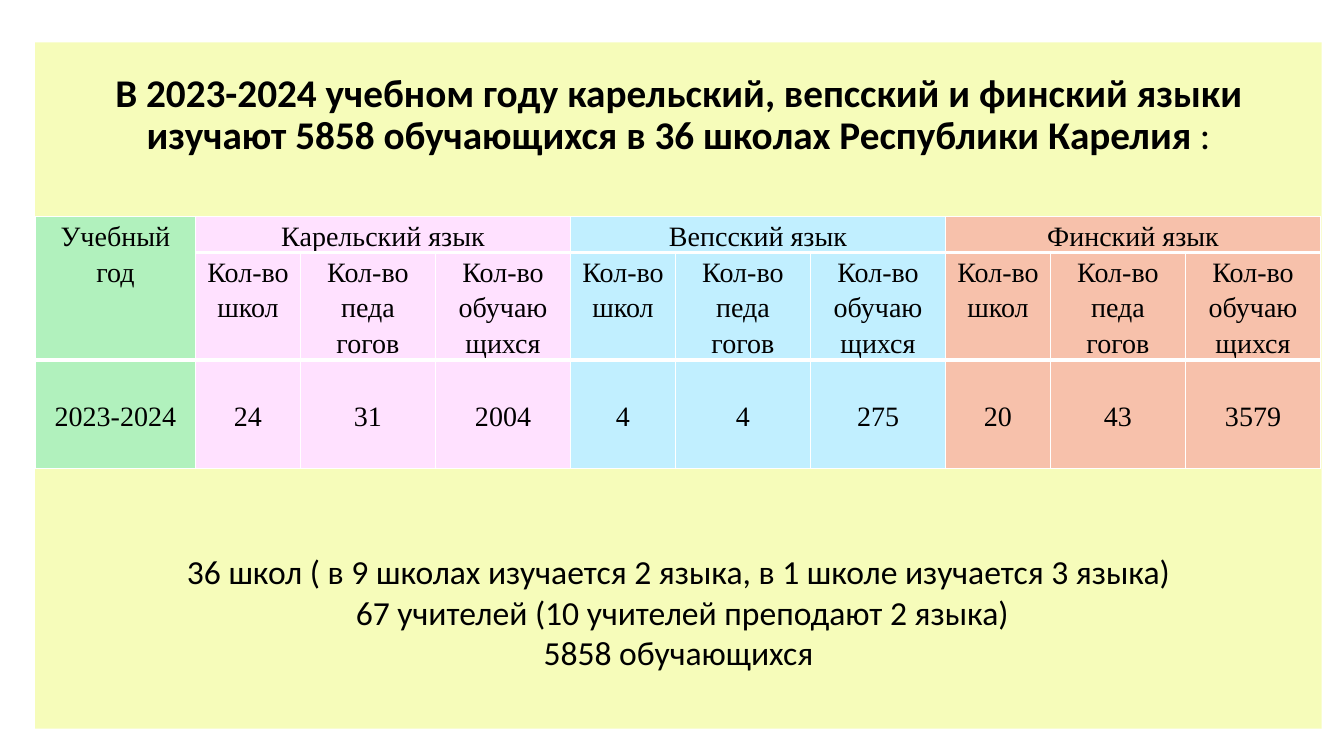
import pptx
import pptx.util
from lxml import etree
from pptx.dml.color import RGBColor
from pptx.enum.shapes import MSO_SHAPE
from pptx.enum.text import MSO_ANCHOR, PP_ALIGN
from pptx.oxml.ns import qn
from pptx.util import Inches, Pt

BLACK = RGBColor(0x00, 0x00, 0x00)
YELLOW = RGBColor(0xF6, 0xFC, 0xBA)
GREEN = RGBColor(0xB1, 0xF1, 0xBD)
PINK = RGBColor(0xFF, 0xE1, 0xFF)
BLUE = RGBColor(0xC1, 0xEF, 0xFF)
SALMON = RGBColor(0xF7, 0xC1, 0xAB)
WHITE = RGBColor(0xFF, 0xFF, 0xFF)

TITLE = ("В 2023-2024 учебном году карельский, вепсский и финский языки "
         "изучают 5858 обучающихся в 36 школах Республики Карелия ")
YEAR_HEADING, YEAR = "Учебный год", "2023-2024"
MEASURES = [["Кол-во школ"], ["Кол-во педа", "гогов"], ["Кол-во", "обучаю", "щихся"]]
LANGUAGES = [
    ("Карельский язык", PINK, (24, 31, 2004)),
    ("Вепсский язык", BLUE, (4, 4, 275)),
    ("Финский язык", SALMON, (20, 43, 3579)),
]
SUMMARY = [
    "36 школ ( в 9 школах изучается 2 языка, в 1 школе изучается 3 языка)",
    " 67 учителей (10 учителей преподают 2 языка)",
    "5858 обучающихся",
]

LEFT, WIDTH = 0.35, 12.76
YEAR_WIDTH, MEASURE_WIDTHS = 1.59, [1.04, 1.34, 1.34]
ROW_HEIGHTS = [0.35, 1.07, 1.07]
TITLE_FONT = {"name": "Calibri", "size": Pt(28), "bold": True}
TABLE_FONT = {"name": "Times New Roman", "size": Pt(20), "bold": False}
SUMMARY_FONT = {"name": "Calibri", "size": Pt(24)}


def add_span(para, text, font):
    span = para.add_run()
    span.text = text
    for key, value in font.items():
        setattr(span.font, key, value)
    span.font.color.rgb = BLACK


def write_lines(frame, lines, font, spacing=None):
    for index, line in enumerate(lines):
        para = frame.add_paragraph() if index else frame.paragraphs[0]
        para.alignment = PP_ALIGN.CENTER
        para.line_spacing = spacing
        add_span(para, line, font)


def add_borders(cell, points):
    """Draw white cell edges; points maps an edge tag to its width."""
    properties = cell._tc.get_or_add_tcPr()
    for tag, width in points.items():
        edge = etree.SubElement(properties, qn(f"a:{tag}"), w=str(Pt(width)))
        fill = etree.SubElement(edge, qn("a:solidFill"))
        etree.SubElement(fill, qn("a:srgbClr"), val=str(WHITE))


def add_panel(page):
    panel = page.shapes.add_shape(MSO_SHAPE.RECTANGLE, Inches(LEFT), Inches(0.42),
                                  Inches(WIDTH), Inches(6.81))
    panel.shadow.inherit = False
    panel.fill.solid()
    panel.fill.fore_color.rgb = YELLOW
    panel.line.fill.background()
    frame = panel.text_frame
    frame.vertical_anchor = MSO_ANCHOR.TOP
    frame.margin_top = Inches(0.31)
    write_lines(frame, [TITLE], TITLE_FONT, 0.9)
    add_span(frame.paragraphs[0], ":", {**TITLE_FONT, "bold": False})


def add_language_table(page):
    per_language = len(MEASURES)
    widths = [YEAR_WIDTH] + MEASURE_WIDTHS * len(LANGUAGES)
    colors = [GREEN] + [color for _, color, _ in LANGUAGES for _ in MEASURES]
    texts = {(0, 0): [YEAR_HEADING], (2, 0): [YEAR]}
    for group, (language, _, values) in enumerate(LANGUAGES):
        first = 1 + group * per_language
        texts[0, first] = [language]
        for offset, (measure, value) in enumerate(zip(MEASURES, values)):
            texts[1, first + offset] = measure
            texts[2, first + offset] = [str(value)]

    table = page.shapes.add_table(
        len(ROW_HEIGHTS), len(widths), Inches(LEFT), Inches(2.15),
        Inches(sum(widths)), Inches(sum(ROW_HEIGHTS))).table
    table.first_row = table.horz_banding = False
    for column, width in zip(table.columns, widths):
        column.width = Inches(width)
    last = len(ROW_HEIGHTS) - 1
    for row, height in enumerate(ROW_HEIGHTS):
        table.rows[row].height = Inches(height)
        for column, color in enumerate(colors):
            cell = table.cell(row, column)
            add_borders(cell, {"lnL": 1, "lnR": 1, "lnT": 3 if row else 1,
                               "lnB": 1 if row == last else 3})
            cell.fill.solid()
            cell.fill.fore_color.rgb = color
            cell.margin_left = cell.margin_right = Inches(0.07)
            cell.margin_top = cell.margin_bottom = 0
            cell.vertical_anchor = MSO_ANCHOR.MIDDLE if row == last else MSO_ANCHOR.TOP
            if (row, column) in texts:
                write_lines(cell.text_frame, texts[row, column], TABLE_FONT, 1.15)
            else:
                cell.text_frame.paragraphs[0].font.size = TABLE_FONT["size"]
    table.cell(0, 0).merge(table.cell(1, 0))
    for first in range(1, len(widths), per_language):
        table.cell(0, first).merge(table.cell(0, first + per_language - 1))


def add_summary(page):
    box = page.shapes.add_textbox(Inches(LEFT), Inches(5.42), Inches(WIDTH), Inches(1.62))
    box.text_frame.word_wrap = True
    write_lines(box.text_frame, SUMMARY, SUMMARY_FONT)


def main():
    deck = pptx.Presentation()
    deck.slide_width, deck.slide_height = Inches(13.33), Inches(7.5)
    page = deck.slides.add_slide(deck.slide_layouts[6])
    add_panel(page)
    add_language_table(page)
    add_summary(page)
    deck.save("out.pptx")


if __name__ == "__main__":
    main()
